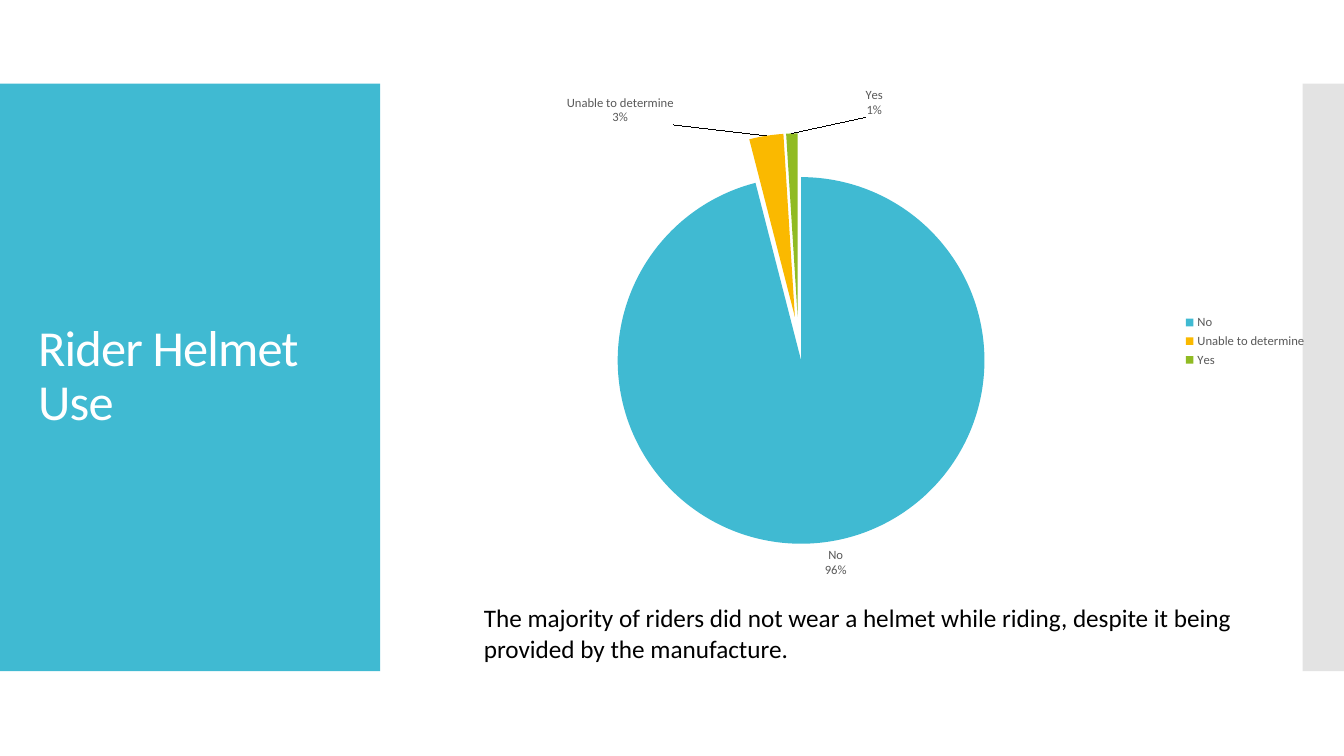
from pptx import Presentation
from pptx.chart.data import CategoryChartData
from pptx.dml.color import RGBColor
from pptx.enum import chart as charts, shapes, text
from pptx.oxml import parse_xml
from pptx.oxml.ns import nsdecls, qn
from pptx.util import Inches, Pt

FONT = "Calibri"
TEAL = RGBColor(0x40, 0xBA, 0xD2)
AMBER = RGBColor(0xFA, 0xB9, 0x00)
GREEN = RGBColor(0x90, 0xBB, 0x23)
GRAY = RGBColor(0xC8, 0xC8, 0xC8)
LABEL = RGBColor(0x59, 0x59, 0x59)
WHITE = RGBColor(0xFF, 0xFF, 0xFF)
BLACK = RGBColor(0, 0, 0)

TITLE = "Rider Helmet Use"
FINDING = ("The majority of riders did not wear a helmet while riding, "
           "despite it being provided by the manufacture.")
# answer, percent, slice colour, label shift as a fraction of the chart
ANSWERS = [
    ("No", 96, TEAL, None),
    ("Unable to determine", 3, AMBER, (-0.1, -0.01)),
    ("Yes", 1, GREEN, (0.09, -0.02)),
]
EXPLOSION = 12
PIE_AREA = {"x": 0.21, "y": 0.09, "w": 0.45, "h": 0.81}
BAND_TOP, BAND_HEIGHT = 0.83, 5.83
SLIDE_WIDTH, SLIDE_HEIGHT = 13.33, 7.5


def add_band(slide, left, width, color, alpha=None):
    band = slide.shapes.add_shape(
        shapes.MSO_SHAPE.RECTANGLE, Inches(left), Inches(BAND_TOP),
        Inches(width), Inches(BAND_HEIGHT))
    band.shadow.inherit = False
    band.fill.solid()
    band.fill.fore_color.rgb = color
    band.line.fill.background()
    if alpha:
        srgb = band.element.spPr.find(".//" + qn("a:srgbClr"))
        srgb.append(parse_xml(f'<a:alpha {nsdecls("a")} val="{alpha * 1000}"/>'))


def style_font(font, size, color):
    font.name, font.size, font.color.rgb = FONT, Pt(size), color


def add_words(slide, box, words, size, color):
    frame = slide.shapes.add_textbox(*map(Inches, box)).text_frame
    frame.word_wrap = True
    run = frame.paragraphs[0].add_run()
    run.text = words
    style_font(run.font, size, color)
    return frame, run


def layout_xml(modes, **lengths):
    parts = "".join(f'<c:{mode} val="edge"/>' for mode in modes)
    parts += "".join(f'<c:{key} val="{val}"/>' for key, val in lengths.items())
    return parse_xml(f'<c:layout {nsdecls("c")}><c:manualLayout>{parts}'
                     '</c:manualLayout></c:layout>')


def show_answer_and_percent(labels):
    """Set the flags of a label element, with the percent on its own line."""
    for flag, value in (("showVal", 0), ("showCatName", 1), ("showPercent", 1)):
        labels.find(qn("c:" + flag)).set("val", str(value))
    separator = parse_xml(f'<c:separator {nsdecls("c")}>\n</c:separator>')
    labels.find(qn("c:showPercent")).getparent().insert(
        labels.index(labels.find(qn("c:showBubbleSize"))) + 1, separator)


def add_pie(slide):
    data = CategoryChartData()
    data.categories = [answer for answer, *_ in ANSWERS]
    data.add_series("Series 1", [percent for _, percent, *_ in ANSWERS])
    chart = slide.shapes.add_chart(
        charts.XL_CHART_TYPE.PIE, Inches(3.96), Inches(0.87),
        Inches(9.1), Inches(5.03), data).chart
    style_font(chart.font, 10, BLACK)
    chart.has_title = False
    chart.has_legend = True
    chart.legend.position = charts.XL_LEGEND_POSITION.RIGHT
    chart.legend.include_in_layout = False
    style_font(chart.legend.font, 9, LABEL)
    pie = chart.plots[0]
    pie.vary_by_categories = True
    series = pie.series[0]

    labels = series.data_labels
    labels.position = charts.XL_LABEL_POSITION.OUTSIDE_END
    style_font(labels.font, 9, LABEL)
    for index, (_, _, color, shift) in enumerate(ANSWERS):
        point = series.points[index]
        point.format.fill.solid()
        point.format.fill.fore_color.rgb = color
        if shift:
            point.data_label.position = charts.XL_LABEL_POSITION.OUTSIDE_END
            style_font(point.data_label.font, 9, LABEL)

    shifts = [shift for *_, shift in ANSWERS if shift]
    for label, (dx, dy) in zip(chart.element.xpath(".//c:dLbl"), shifts):
        label.insert(1, layout_xml((), x=dx, y=dy))
        show_answer_and_percent(label)
    show_answer_and_percent(chart.element.xpath(".//c:ser/c:dLbls")[0])

    first_slice = chart.element.xpath(".//c:dPt")[0]
    first_slice.addprevious(parse_xml(
        f'<c:explosion {nsdecls("c")} val="{EXPLOSION}"/>'))
    plot_area = chart.element.xpath(".//c:plotArea")[0]
    for old in plot_area.findall(qn("c:layout")):
        plot_area.remove(old)
    area = layout_xml(("xMode", "yMode"), **PIE_AREA)
    area[0].insert(0, parse_xml(
        f'<c:layoutTarget {nsdecls("c")} val="inner"/>'))
    plot_area.insert(0, area)


def main():
    deck = Presentation()
    deck.slide_width, deck.slide_height = Inches(SLIDE_WIDTH), Inches(SLIDE_HEIGHT)
    slide = deck.slides.add_slide(deck.slide_layouts[6])

    add_band(slide, 0, 3.77, TEAL)
    add_band(slide, 12.92, SLIDE_WIDTH - 12.92, GRAY, alpha=50)
    title, title_run = add_words(slide, (0.28, 1.23, 3.22, 5.03), TITLE, 36, WHITE)
    title.vertical_anchor = text.MSO_ANCHOR.MIDDLE
    title.paragraphs[0].line_spacing = 0.9
    title_run.font.element.set("spc", "-60") if hasattr(
        title_run.font, "element") else title_run._r.get_or_add_rPr().set("spc", "-60")
    add_pie(slide)
    finding, _ = add_words(slide, (4.7, 5.93, 7.62, 0.71), FINDING, 18, BLACK)
    finding.auto_size = text.MSO_AUTO_SIZE.SHAPE_TO_FIT_TEXT
    deck.save("out.pptx")


if __name__ == "__main__":
    main()
